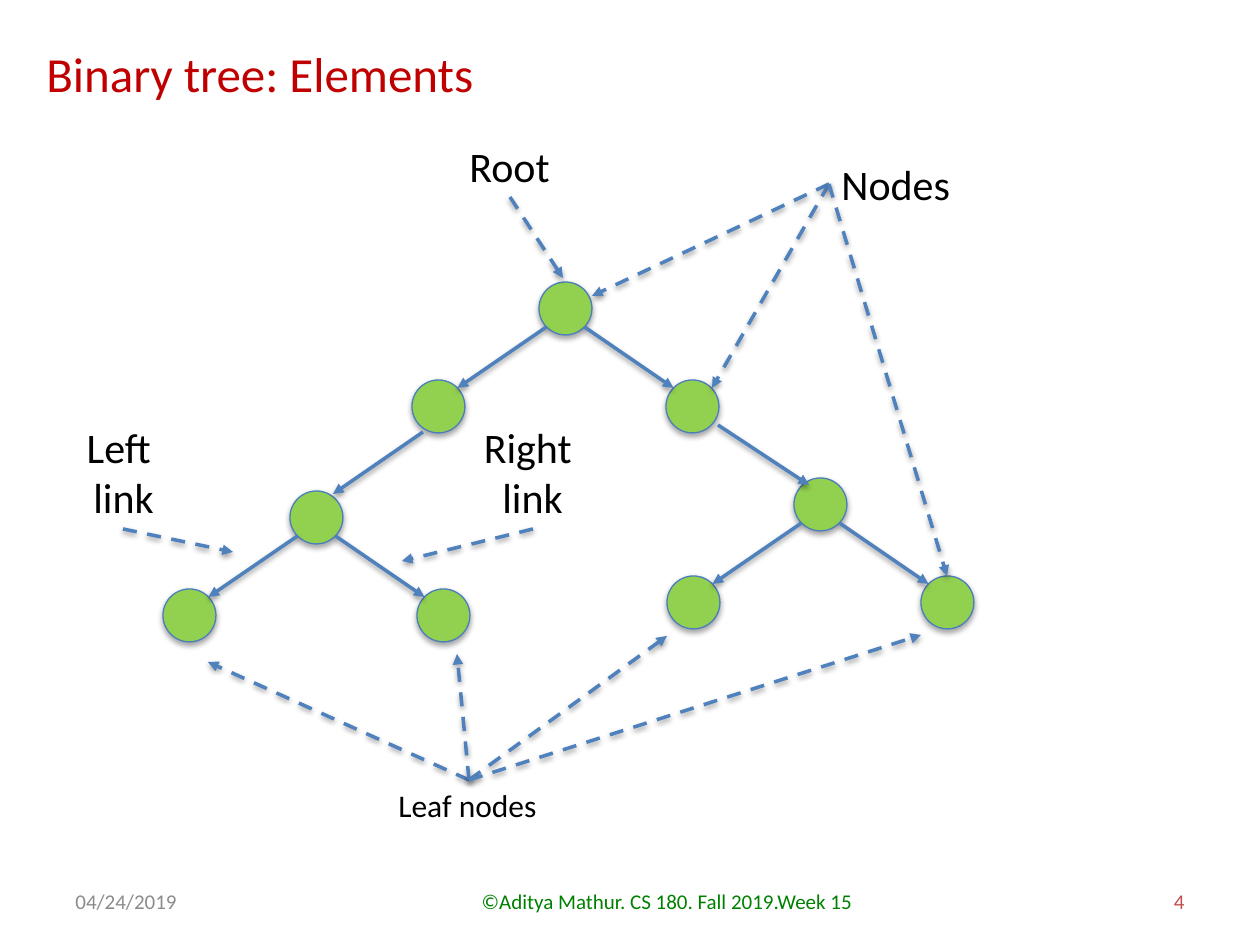
from lxml import etree
from pptx import Presentation
from pptx.dml.color import RGBColor
from pptx.enum.dml import MSO_LINE
from pptx.enum.shapes import MSO_CONNECTOR, MSO_SHAPE
from pptx.enum.text import MSO_ANCHOR, PP_ALIGN
from pptx.oxml.ns import qn
from pptx.util import Pt

SCALE = 914400 / 126
DASH = MSO_LINE.DASH
STRAIGHT = MSO_CONNECTOR.STRAIGHT
OVAL = MSO_SHAPE.OVAL
TOP, MIDDLE = MSO_ANCHOR.TOP, MSO_ANCHOR.MIDDLE
LEFT, CENTER, RIGHT = PP_ALIGN.LEFT, PP_ALIGN.CENTER, PP_ALIGN.RIGHT
NODE_SIZE = 53
COLORS = {
    "title": "C00000",
    "label": "000000",
    "date": "8C8C8C",
    "footer": "008000",
    "number": "C0504D",
    "node": "92D050",
    "outline": "4B7EBC",
    "link": "4F81BD",
}


def emu(*lengths):
    return [round(length * SCALE) for length in lengths]


def color(name):
    return RGBColor.from_string(COLORS[name])


class TreeSlide:
    """Draws the labels, nodes and arrows of a tree diagram on one slide."""

    def __init__(self, page, font="Calibri"):
        self.page = page
        self.font = font

    def text(self, frame, lines, size, tone, align=LEFT, anchor=TOP, wrap=True):
        box = self.page.shapes.add_textbox(*emu(*frame)).text_frame
        box.word_wrap = wrap
        box.vertical_anchor = anchor
        box.text = "\n".join(lines)
        for paragraph in box.paragraphs:
            paragraph.alignment = align
            paragraph.font.name = self.font
            paragraph.font.size = Pt(size)
            paragraph.font.color.rgb = color(tone)

    def label(self, frame, *lines, size=24, align=LEFT):
        self.text(frame, lines, size, "label", align, wrap=False)

    def shadow(self, shape, distance, opacity):
        effects = etree.SubElement(shape._element.spPr, qn("a:effectLst"))
        outer = etree.SubElement(effects, qn("a:outerShdw"), blurRad="40000",
                                 dist=str(distance), dir="5400000", rotWithShape="0")
        black = etree.SubElement(outer, qn("a:srgbClr"), val="000000")
        etree.SubElement(black, qn("a:alpha"), val=str(opacity * 1000))

    def node(self, left, top):
        circle = self.page.shapes.add_shape(OVAL, *emu(left, top, NODE_SIZE, NODE_SIZE))
        circle.fill.solid()
        circle.fill.fore_color.rgb = color("node")
        circle.line.color.rgb = color("outline")
        circle.line.width = Pt(0.75)
        self.shadow(circle, 23000, 35)

    def arrow(self, start, end, dashed=False):
        link = self.page.shapes.add_connector(STRAIGHT, *emu(*start, *end))
        link.line.color.rgb = color("link")
        link.line.width = Pt(2)
        if dashed:
            link.line.dash_style = DASH
        etree.SubElement(link.line._get_or_add_ln(), qn("a:tailEnd"), type="triangle")
        self.shadow(link, 20000, 38)

    def branch(self, left, top):
        self.node(left, top)
        for side in (-1, 1):
            self.node(left + side * 127, top + 98)
        middle = left + NODE_SIZE / 2
        for side in (-1, 1):
            self.arrow((middle + side * 19, top + 45), (middle + side * 108, top + 106))

    def pointers(self, start, *ends):
        for end in ends:
            self.arrow(start, end, dashed=True)


def main():
    deck = Presentation()
    deck.slide_width, deck.slide_height = emu(1260, 945)
    slide = TreeSlide(deck.slides.add_slide(deck.slide_layouts[6]))

    slide.text((63, 876, 294, 50), ["04/24/2019"], 12, "date", LEFT, MIDDLE)
    slide.text((431, 876, 472, 50), ["©Aditya Mathur. CS 180. Fall 2019.Week 15"],
               12, "footer", CENTER, MIDDLE)
    slide.text((903, 876, 294, 50), ["4"], 12, "number", RIGHT, MIDDLE)
    slide.text((34, 37, 633, 72), ["Binary tree: Elements"], 28, "title")

    for corner in ((539, 282), (290, 491), (794, 478)):
        slide.branch(*corner)
    slide.arrow((423, 432), (333, 494))
    slide.arrow((718, 425), (809, 485))

    slide.label((829, 152, 135, 63), "Nodes")
    slide.pointers((829, 184), (592, 296), (712, 388), (947, 576))
    slide.label((457, 134, 106, 63), "Root")
    slide.pointers((510, 197), (563, 278))
    slide.label((386, 780, 165, 50), "Leaf nodes", size=18)
    slide.pointers((469, 780), (208, 662), (457, 654), (667, 636), (921, 635))
    slide.label((73, 415, 101, 115), "Left ", "link", align=CENTER)
    slide.pointers((123, 529), (233, 552))
    slide.label((471, 415, 123, 115), "Right ", "link", align=CENTER)
    slide.pointers((533, 529), (402, 561))

    deck.save("out.pptx")


if __name__ == "__main__":
    main()
